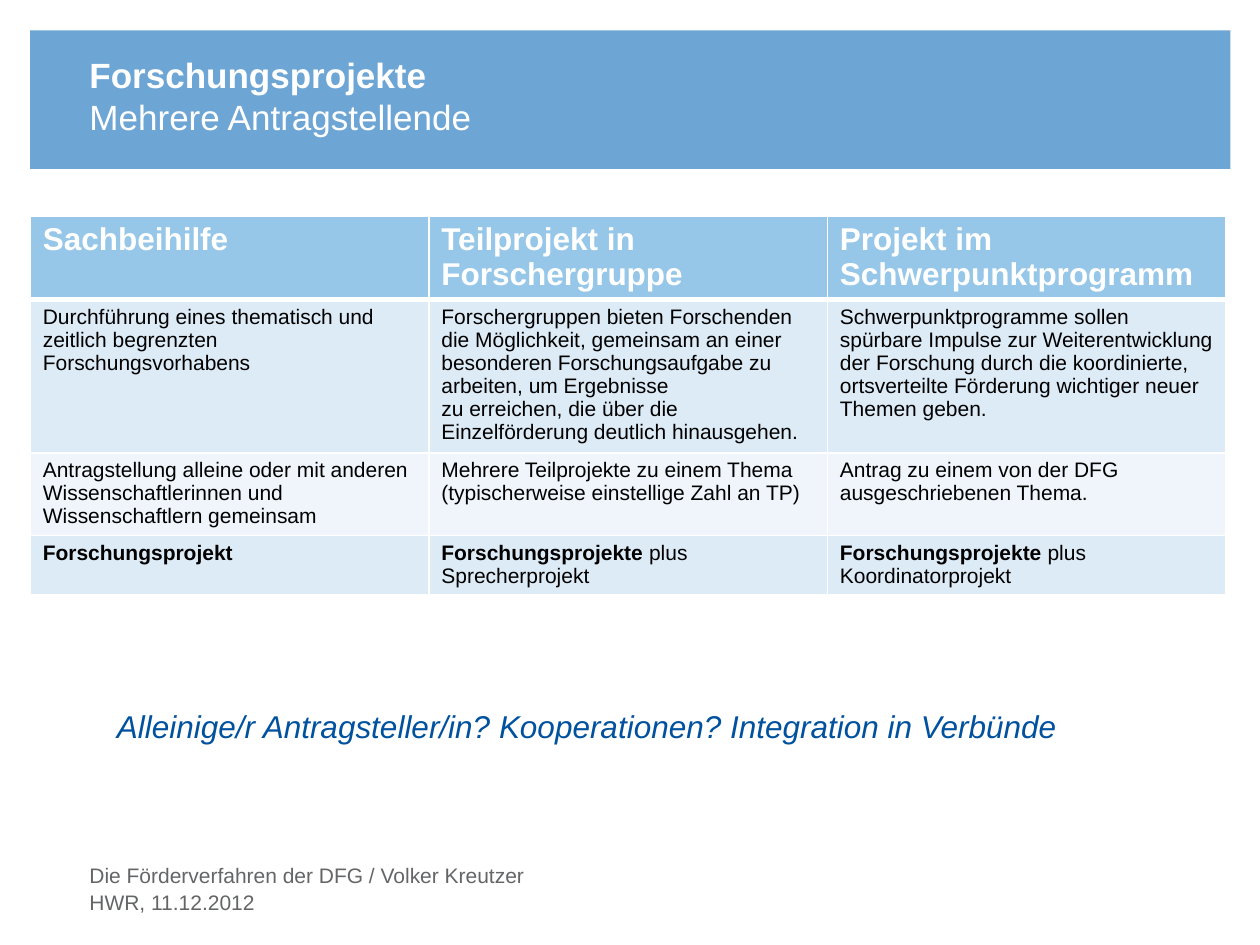
from dataclasses import dataclass

from lxml.etree import SubElement
from pptx import Presentation
from pptx.dml.color import RGBColor
from pptx.enum.shapes import MSO_SHAPE
from pptx.enum.text import MSO_ANCHOR, MSO_AUTO_SIZE, PP_ALIGN
from pptx.oxml.ns import qn
from pptx.util import Inches, Pt

WHITE = RGBColor(0xFF, 0xFF, 0xFF)
BLACK = RGBColor(0x00, 0x00, 0x00)
BAND_BLUE = RGBColor(0x6D, 0xA5, 0xD5)
HEADER_BLUE = RGBColor(0x96, 0xC7, 0xE8)
ROW_BLUE = RGBColor(0xDD, 0xEB, 0xF6)
ROW_PALE = RGBColor(0xEF, 0xF5, 0xFB)
QUESTION_BLUE = RGBColor(0x00, 0x51, 0x9E)
FOOTER_GREY = RGBColor(0x64, 0x65, 0x67)

SLIDE_WIDTH, SLIDE_HEIGHT = Inches(10), Inches(7.5)


@dataclass(frozen=True)
class Region:
    """A rectangle in percent of the slide's width and height."""
    left: float
    top: float
    width: float
    height: float

    def lengths(self) -> tuple[int, int, int, int]:
        return (int(SLIDE_WIDTH * self.left / 100), int(SLIDE_HEIGHT * self.top / 100),
                int(SLIDE_WIDTH * self.width / 100), int(SLIDE_HEIGHT * self.height / 100))


@dataclass(frozen=True)
class Style:
    size: int
    color: RGBColor
    bold: bool = False
    italic: bool = False


@dataclass(frozen=True)
class Label:
    region: Region
    text: str
    style: Style
    inset: bool = False


@dataclass(frozen=True)
class Row:
    height: float  # percent of the slide's height
    fill: RGBColor
    style: Style
    cells: tuple[str, ...]
    lead: str = ""  # bold words that open each cell
    bottom_border: int = 1


HEADING = Style(20, WHITE, bold=True)
SUBHEADING = Style(20, WHITE)
HEADER = Style(18, WHITE, bold=True)
CELL = Style(12, BLACK)
FOOTER = Style(12, FOOTER_GREY)

BAND = Region(2.4, 3.2, 95.25, 14.67)
TITLE = Label(Region(7.1, 6.13, 86.6, 4), "Forschungsprojekte", HEADING)
SUBTITLE = Label(Region(7.1, 10.53, 86.6, 4), "Mehrere Antragstellende", SUBHEADING)
TABLE = Region(2.4, 22.93, 94.9, 40)
LABELS = (
    Label(Region(8.3, 74.13, 83.5, 5.33),
          "Alleinige/r Antragsteller/in? Kooperationen? Integration in Verbünde",
          Style(18, QUESTION_BLUE, italic=True), inset=True),
    Label(Region(7.1, 94.13, 69.5, 3.6), "HWR, 11.12.2012", FOOTER),
    Label(Region(7.1, 91.33, 69.5, 2.93),
          "Die Förderverfahren der DFG / Volker Kreutzer", FOOTER),
)
ROWS = (
    Row(8.75, HEADER_BLUE, HEADER,
        ("Sachbeihilfe", "Teilprojekt in Forschergruppe", "Projekt im Schwerpunktprogramm"),
        bottom_border=3),
    Row(16.25, ROW_BLUE, CELL, (
        "Durchführung eines thematisch und zeitlich begrenzten \nForschungsvorhabens",
        "Forschergruppen bieten Forschenden die Möglichkeit, gemeinsam an einer "
        "besonderen Forschungsaufgabe zu arbeiten, um Ergebnisse \nzu erreichen, "
        "die über die Einzelförderung deutlich hinausgehen.",
        "Schwerpunktprogramme sollen spürbare Impulse zur Weiterentwicklung der "
        "Forschung durch die koordinierte, ortsverteilte Förderung wichtiger neuer "
        "Themen geben.")),
    Row(8.75, ROW_PALE, CELL, (
        "Antragstellung alleine oder mit anderen Wissenschaftlerinnen und "
        "Wissenschaftlern gemeinsam",
        "Mehrere Teilprojekte zu einem Thema (typischerweise einstellige Zahl an TP)",
        "Antrag zu einem von der DFG ausgeschriebenen Thema.")),
    Row(6.25, ROW_BLUE, CELL, ("", "e plus Sprecherprojekt", "e plus Koordinatorprojekt"),
        lead="Forschungsprojekt"),
)


def style_paragraph(para, style: Style) -> None:
    para.alignment = PP_ALIGN.LEFT
    para.space_before = Pt(0)
    para.font.name = "Arial"
    para.font.size = Pt(style.size)
    para.font.color.rgb = style.color
    para.font.bold = style.bold
    para.font.italic = style.italic


def fill_label(box, label: Label, anchor=MSO_ANCHOR.TOP, plain_list: bool = False) -> None:
    box.left, box.top, box.width, box.height = label.region.lengths()
    frame = box.text_frame
    frame.word_wrap = True
    frame.auto_size = MSO_AUTO_SIZE.NONE
    frame.vertical_anchor = anchor
    if not label.inset:
        frame.margin_left = frame.margin_top = frame.margin_right = frame.margin_bottom = 0
    para = frame.paragraphs[0]
    para.text = label.text
    if plain_list:
        properties = para._p.get_or_add_pPr()
        properties.set("marL", "0")
        properties.set("indent", "0")
        SubElement(properties, qn("a:buNone"))
    style_paragraph(para, label.style)


def draw_borders(cell, top: int, bottom: int) -> None:
    properties = cell._tc.get_or_add_tcPr()
    sides = (("a:lnL", 1), ("a:lnR", 1), ("a:lnT", top), ("a:lnB", bottom))
    for tag, points in sides:
        line = SubElement(properties, qn(tag), w=str(Pt(points)))
        color = SubElement(line, qn("a:solidFill"))
        SubElement(color, qn("a:srgbClr"), val=str(WHITE))


def fill_cell(cell, row: Row, text: str, top_border: int) -> None:
    draw_borders(cell, top_border, row.bottom_border)
    cell.fill.solid()
    cell.fill.fore_color.rgb = row.fill
    para = cell.text_frame.paragraphs[0]
    if row.lead:
        # A plural ending belongs to the bold lead
        ending, _, rest = text.partition(" ")
        span = para.add_run()
        span.text = row.lead + ending
        span.font.bold = True
        if rest:
            para.add_run().text = " " + rest
    else:
        para.text = text
    style_paragraph(para, row.style)
    para.line_spacing = 0.98


def draw_table(page, region: Region, rows: tuple[Row, ...]) -> None:
    columns = len(rows[0].cells)
    table = page.shapes.add_table(len(rows), columns, *region.lengths()).table
    table.first_row = table.horz_banding = False
    for column in table.columns:
        column.width = int(SLIDE_WIDTH * region.width / 100 / columns)
    top_border = 1
    for index, row in enumerate(rows):
        table.rows[index].height = int(SLIDE_HEIGHT * row.height / 100)
        for column, text in enumerate(row.cells):
            fill_cell(table.cell(index, column), row, text, top_border)
        top_border = row.bottom_border


def main() -> None:
    deck = Presentation()
    deck.slide_width, deck.slide_height = SLIDE_WIDTH, SLIDE_HEIGHT
    page = deck.slides.add_slide(deck.slide_layouts[1])

    # Title band, behind the title and subtitle
    band = page.shapes.add_shape(MSO_SHAPE.RECTANGLE, *BAND.lengths())
    band.shadow.inherit = False
    band.fill.solid()
    band.fill.fore_color.rgb = BAND_BLUE
    band.line.fill.background()
    title = page.shapes.title
    title.element.addprevious(band.element)
    fill_label(title, TITLE, MSO_ANCHOR.BOTTOM)
    fill_label(page.placeholders[1], SUBTITLE, MSO_ANCHOR.BOTTOM, plain_list=True)

    # Comparison of the funding formats
    draw_table(page, TABLE, ROWS)

    # Closing question and footer
    for label in LABELS:
        fill_label(page.shapes.add_textbox(*label.region.lengths()), label)

    deck.save("out.pptx")


if __name__ == "__main__":
    main()
